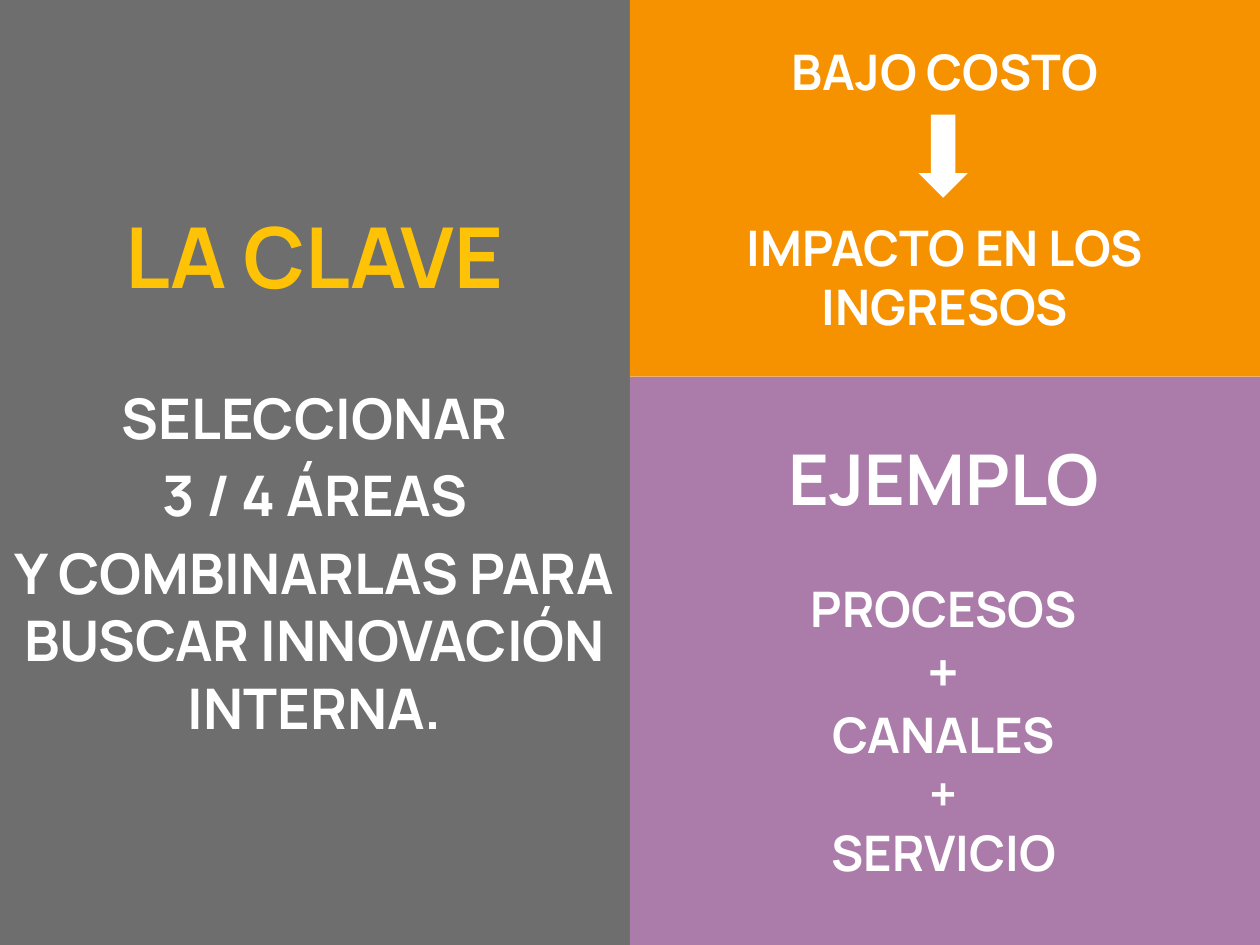
from pptx import Presentation
from pptx.dml.color import RGBColor
from pptx.enum.shapes import MSO_SHAPE
from pptx.enum.text import MSO_ANCHOR, PP_ALIGN
from pptx.util import Inches, Pt

WIDE, HIGH, HALF, SPLIT = 10, 7.5, 5, 2.99
FONT, WHITE, GOLD = "Manrope", "FFFFFF", "FEC306"

KEY = [
    ("LA CLAVE", dict(size=48, color=GOLD)),
    ("SELECCIONAR", dict(size=32, gap=44.4)),
    ("3 / 4 ÁREAS", dict(size=32, gap=6)),
    ("Y COMBINARLAS PARA BUSCAR INNOVACIÓN INTERNA.", dict(size=32, gap=6)),
]
COST = [
    ("BAJO COSTO", {}),
    ("IMPACTO EN LOS INGRESOS", dict(gap=67.2)),
]
CASE = [
    ("EJEMPLO", dict(size=40)),
    ("PROCESOS", dict(gap=33.6)),
    ("+", dict(size=32)),
    ("CANALES", {}),
    ("+", {}),
    ("SERVICIO", {}),
]
PANELS = [
    ((0, 0, HALF, HIGH), "6E6E6E", KEY),
    ((HALF, 0, HALF, SPLIT), "F69200", COST),
    ((HALF, SPLIT, HALF, HIGH - SPLIT), "AB7CAA", []),
]
ARROW = (7.29, 0.91, 0.39, 0.66)
LIST = (6.13, 3.41, 2.72, 3.74)


def tint(code):
    return RGBColor.from_string(code)


def write(para, text, size=28, color=WHITE, gap=0):
    para.alignment = PP_ALIGN.CENTER
    para.space_before = Pt(gap)
    run = para.add_run()
    run.text = text
    font = run.font
    font.name, font.size, font.bold = FONT, Pt(size), True
    font.color.rgb = tint(color)


def fill_text(frame, lines, anchor):
    frame.word_wrap = True
    frame.vertical_anchor = anchor
    for i, (text, style) in enumerate(lines):
        para = frame.add_paragraph() if i else frame.paragraphs[0]
        write(para, text, **style)


def block(slide, kind, box, color):
    shape = slide.shapes.add_shape(kind, *map(Inches, box))
    shape.shadow.inherit = False
    shape.fill.solid()
    shape.fill.fore_color.rgb = tint(color)
    shape.line.fill.background()
    return shape


def main():
    deck = Presentation()
    deck.slide_width, deck.slide_height = Inches(WIDE), Inches(HIGH)
    slide = deck.slides.add_slide(deck.slide_layouts[6])
    for box, color, lines in PANELS:
        panel = block(slide, MSO_SHAPE.RECTANGLE, box, color)
        fill_text(panel.text_frame, lines, MSO_ANCHOR.MIDDLE)
    block(slide, MSO_SHAPE.DOWN_ARROW, ARROW, WHITE)
    area = slide.shapes.add_textbox(*map(Inches, LIST))
    fill_text(area.text_frame, CASE, MSO_ANCHOR.TOP)
    deck.save("out.pptx")


if __name__ == "__main__":
    main()
